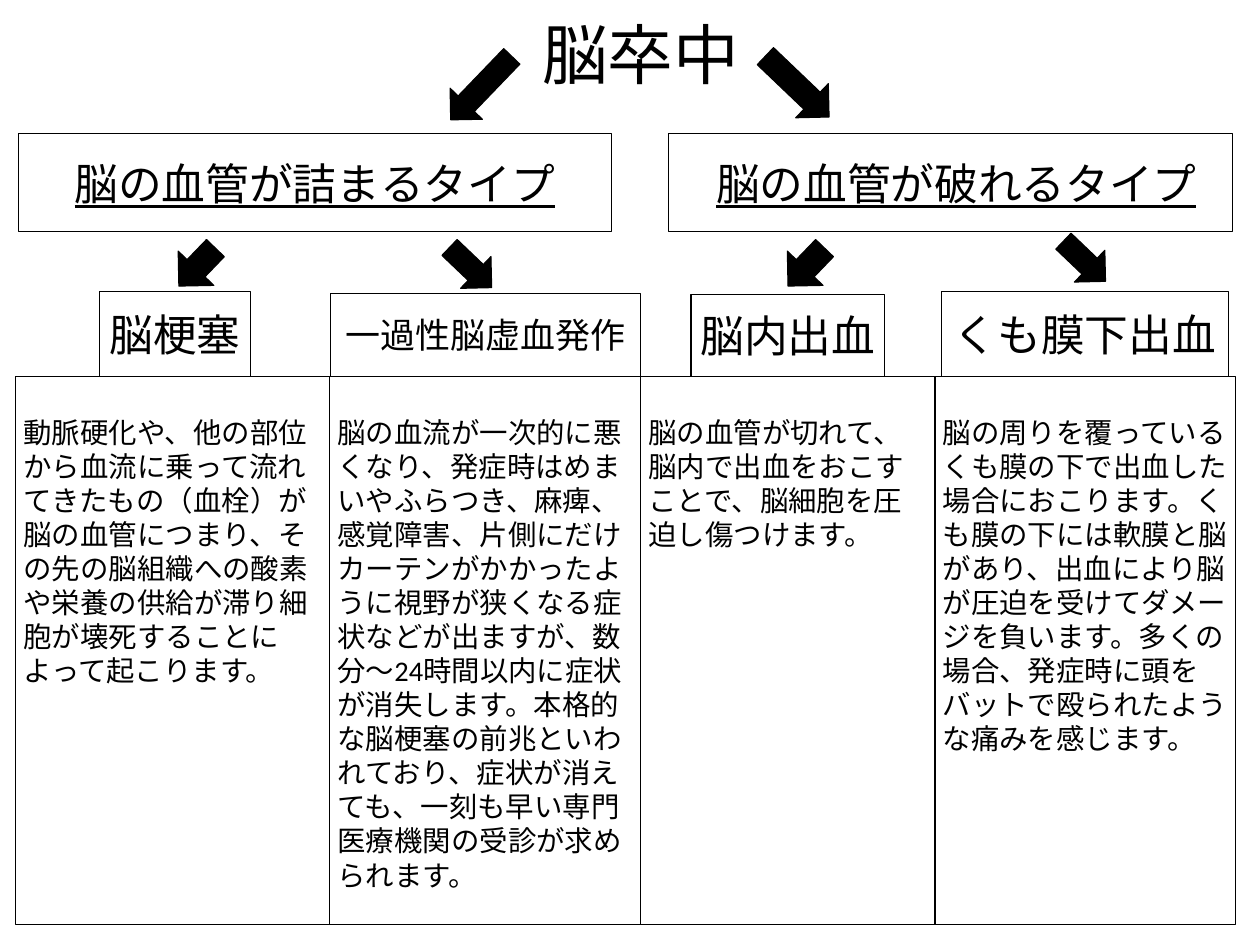
from pptx import Presentation
from pptx.dml.color import RGBColor
from pptx.enum.lang import MSO_LANGUAGE_ID
from pptx.enum.shapes import MSO_SHAPE
from pptx.enum.text import MSO_ANCHOR, MSO_AUTO_SIZE, PP_ALIGN
from pptx.util import Inches, Pt

TITLE_ONLY = 5
BODY_TOP, BODY_BOTTOM = 4.78, 11.75
COLUMN_EDGES = [0.2, 4.19, 8.14, 11.88, 15.7]
LEFTWARD, RIGHTWARD = 43.9, 313.7

# text, left, width, left inset
TYPES = [
    ("脳の血管が詰まるタイプ", 0.23, 7.54, 0.1),
    ("脳の血管が破れるタイプ", 8.49, 7.17, 0.25),
]

# name, left, top, width, text size, description
DISEASES = [
    ("脳梗塞", 1.27, 3.71, 1.91, 40,
     "動脈硬化や、他の部位から血流に乗って流れてきたもの（血栓）が脳の血管につまり、"
     "その先の脳組織への酸素や栄養の供給が滞り細胞が壊死することによって起こります。"),
    ("一過性脳虚血発作", 4.2, 3.73, 3.94, 32,
     "脳の血流が一次的に悪くなり、発症時はめまいやふらつき、麻痺、感覚障害、"
     "片側にだけカーテンがかかったように視野が狭くなる症状などが出ますが、"
     "数分～24時間以内に症状が消失します。本格的な脳梗塞の前兆といわれており、"
     "症状が消えても、一刻も早い専門医療機関の受診が求められます。"),
    ("脳内出血", 8.78, 3.74, 2.46, 40,
     "脳の血管が切れて、脳内で出血をおこすことで、脳細胞を圧迫し傷つけます。"),
    ("くも膜下出血", 11.96, 3.71, 3.65, 40,
     "脳の周りを覆っているくも膜の下で出血した場合におこります。"
     "くも膜の下には軟膜と脳があり、出血により脳が圧迫を受けてダメージを負います。"
     "多くの場合、発症時に頭をバットで殴られたような痛みを感じます。"),
]

# left, top, width, height, rotation
ARROWS = [
    (5.83, 0.56, 0.57, 1.12, LEFTWARD),
    (9.83, 0.54, 0.6, 1.12, RIGHTWARD),
    (2.19, 3.06, 0.63, 0.67, LEFTWARD),
    (5.7, 3.03, 0.56, 0.74, RIGHTWARD),
    (9.93, 3.06, 0.63, 0.67, LEFTWARD),
    (13.5, 2.95, 0.56, 0.74, RIGHTWARD),
]


def color(hex_value):
    return RGBColor.from_string(hex_value)


class StrokeSlide:
    font = "Calibri"
    ink = "000000"
    paper = "FFFFFF"

    def __init__(self, deck):
        self.page = deck.slides.add_slide(deck.slide_layouts[TITLE_ONLY])

    def set_text(self, shape, text, size, align=PP_ALIGN.CENTER,
                 anchor=MSO_ANCHOR.MIDDLE, underline=False):
        frame = shape.text_frame
        frame.word_wrap = True
        frame.auto_size = MSO_AUTO_SIZE.NONE
        frame.vertical_anchor = anchor
        para = frame.paragraphs[0]
        para.alignment = align
        span = para.add_run()
        span.text = text
        span.font.name = self.font
        span.font.size = Pt(size)
        span.font.underline = underline
        span.font.color.rgb = color(self.ink)
        span.font.language_id = MSO_LANGUAGE_ID.JAPANESE

    def title(self, text, left, top, width, height):
        title = self.page.shapes.title
        title.left, title.top = Inches(left), Inches(top)
        title.width, title.height = Inches(width), Inches(height)
        self.set_text(title, text, 60)

    def shape(self, kind, left, top, width, height, fill):
        shape = self.page.shapes.add_shape(
            kind, Inches(left), Inches(top), Inches(width), Inches(height))
        shape.shadow.inherit = False
        shape.fill.solid()
        shape.fill.fore_color.rgb = color(fill)
        shape.line.color.rgb = color(self.ink)
        shape.line.width = Pt(1)
        return shape

    def box(self, text, left, top, width, height, size,
            left_inset=0.1, top_inset=0.05, **style):
        box = self.shape(MSO_SHAPE.RECTANGLE, left, top, width, height, self.paper)
        box.text_frame.margin_left = Inches(left_inset)
        box.text_frame.margin_top = Inches(top_inset)
        self.set_text(box, text, size, **style)

    def arrow(self, left, top, width, height, rotation):
        arrow = self.shape(MSO_SHAPE.DOWN_ARROW, left, top, width, height, self.ink)
        arrow.rotation = rotation


def main():
    deck = Presentation()
    deck.slide_width, deck.slide_height = Inches(16.01), Inches(12.01)
    slide = StrokeSlide(deck)

    slide.title("脳卒中", 6.33, -0.04, 3.62, 1.44)
    for text, left, width, inset in TYPES:
        slide.box(text, left, 1.7, width, 1.24, 40, left_inset=inset, underline=True)

    columns = zip(DISEASES, COLUMN_EDGES, COLUMN_EDGES[1:])
    for (name, left, top, width, size, description), start, end in columns:
        slide.box(name, left, top, width, BODY_TOP - top, size)
        slide.box(description, start, BODY_TOP, end - start, BODY_BOTTOM - BODY_TOP, 26,
                  top_inset=0.49, align=PP_ALIGN.LEFT, anchor=MSO_ANCHOR.TOP)

    for arrow in ARROWS:
        slide.arrow(*arrow)

    deck.save("out.pptx")


if __name__ == "__main__":
    main()
